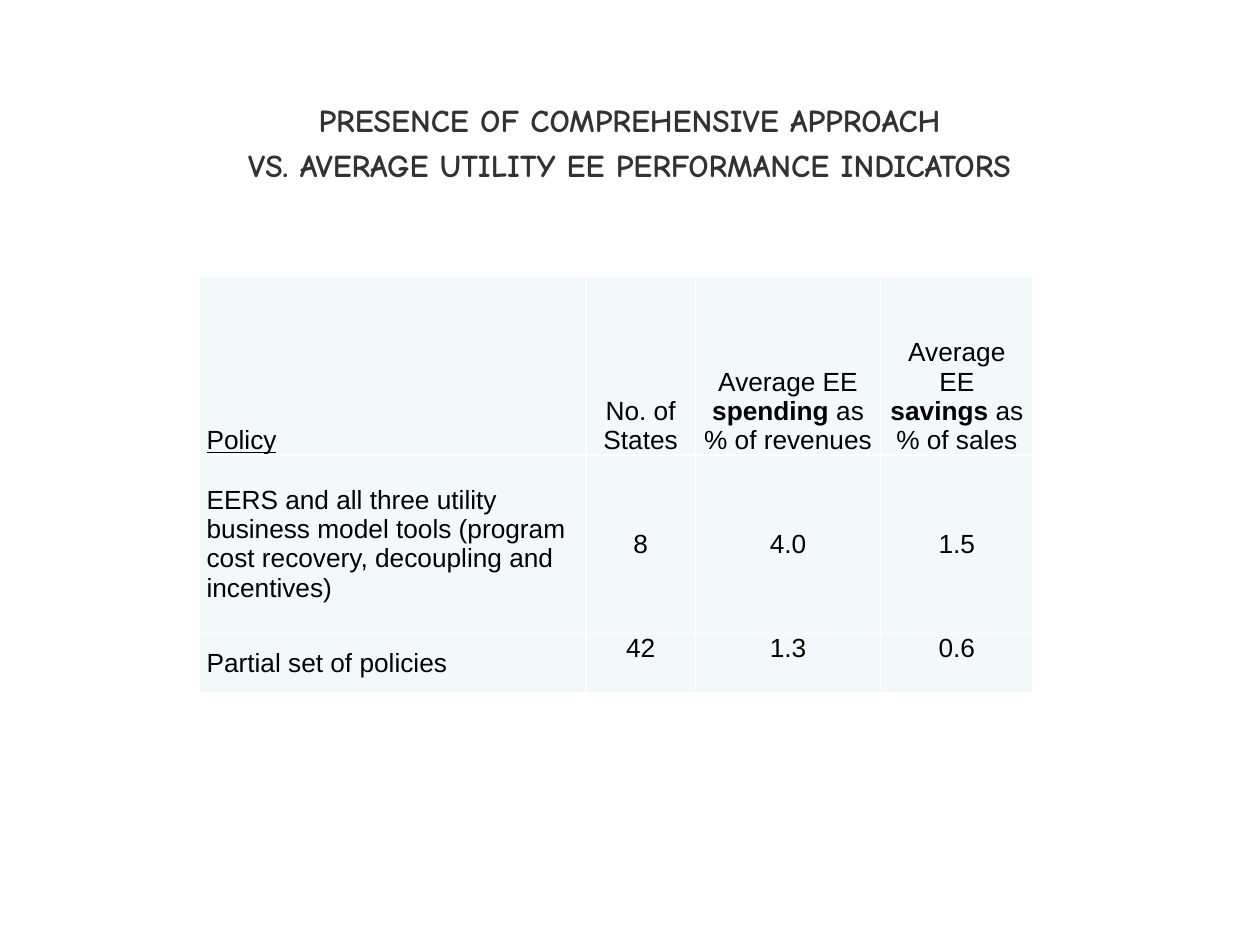
"""Build a slide with a table comparing energy efficiency policy and performance."""
from lxml.etree import SubElement
from pptx import Presentation
from pptx.dml.color import RGBColor
from pptx.enum.text import MSO_ANCHOR, PP_ALIGN
from pptx.oxml.ns import qn
from pptx.util import Inches, Pt

COLORS = {"title": "323232", "text": "000000", "cell": "F3F9FA", "border": "FFFFFF"}


def write(paragraph, text, font="Arial", size=15, color="text", bold=False,
          underline=False, align=PP_ALIGN.LEFT):
    paragraph.alignment = align
    span = paragraph.add_run()
    span.text = text
    span.font.name = font
    span.font.size = Pt(size)
    span.font.bold = bold
    span.font.underline = underline
    span.font.color.rgb = RGBColor.from_string(COLORS[color])


def add_borders(cell):
    properties = cell._tc.get_or_add_tcPr()
    for position, side in enumerate(("lnL", "lnR", "lnT", "lnB")):
        line = properties.makeelement(qn(f"a:{side}"), {"w": str(Pt(1))})
        fill = SubElement(line, qn("a:solidFill"))
        SubElement(fill, qn("a:srgbClr"), val=COLORS["border"])
        properties.insert(position, line)


deck = Presentation()
deck.slide_width = Inches(10)
deck.slide_height = Inches(7.5)
page = deck.slides.add_slide(deck.slide_layouts[6])
width, height = deck.slide_width, deck.slide_height

title_box = page.shapes.add_textbox(
    int(width * 0.07), int(height * 0.1), int(width * 0.86), int(height * 0.14))
title = title_box.text_frame
title.word_wrap = True
title.vertical_anchor = MSO_ANCHOR.TOP
title_lines = ("PRESENCE OF COMPREHENSIVE APPROACH",
               "VS. AVERAGE UTILITY EE PERFORMANCE INDICATORS")
for index, text in enumerate(title_lines):
    paragraph = title.add_paragraph() if index else title.paragraphs[0]
    paragraph.space_before = Pt(4 * index)
    write(paragraph, text, font="Comic Neue", size=18.2, color="title",
          bold=True, align=PP_ALIGN.CENTER)

column_widths = [3.07, 0.87, 1.47, 1.21]
row_heights = [1.42, 1.42, 0.47]
row_anchors = [MSO_ANCHOR.BOTTOM, MSO_ANCHOR.MIDDLE, MSO_ANCHOR.TOP]
rows = [
    [["Policy"], ["No. of States"],
     ["Average EE ", "spending ", "as % of revenues"],
     ["Average EE ", "savings", " as % of sales"]],
    [["EERS and all three utility business model tools "
      "(program cost recovery, decoupling and incentives)"],
     ["8"], ["4.0"], ["1.5"]],
    [["Partial set of policies"], ["42"], ["1.3"], ["0.6"]],
]
table = page.shapes.add_table(
    len(rows), len(column_widths), Inches(1.58), Inches(2.19),
    Inches(sum(column_widths)), Inches(sum(row_heights))).table
for column, size in zip(table.columns, column_widths):
    column.width = Inches(size)
for row, size in zip(table.rows, row_heights):
    row.height = Inches(size)

for row_index, row in enumerate(rows):
    for column_index, spans in enumerate(row):
        cell = table.cell(row_index, column_index)
        cell.fill.solid()
        cell.fill.fore_color.rgb = RGBColor.from_string(COLORS["cell"])
        add_borders(cell)
        cell.margin_left = cell.margin_right = Inches(0.06)
        cell.margin_top = cell.margin_bottom = 0
        is_policy = column_index == 0
        cell.vertical_anchor = row_anchors[row_index]
        if is_policy and row_index > 0:
            cell.vertical_anchor = MSO_ANCHOR.MIDDLE
        for span_index, text in enumerate(spans):
            write(cell.text_frame.paragraphs[0], text, bold=span_index == 1,
                  underline=is_policy and row_index == 0,
                  align=PP_ALIGN.LEFT if is_policy else PP_ALIGN.CENTER)

deck.save("out.pptx")
